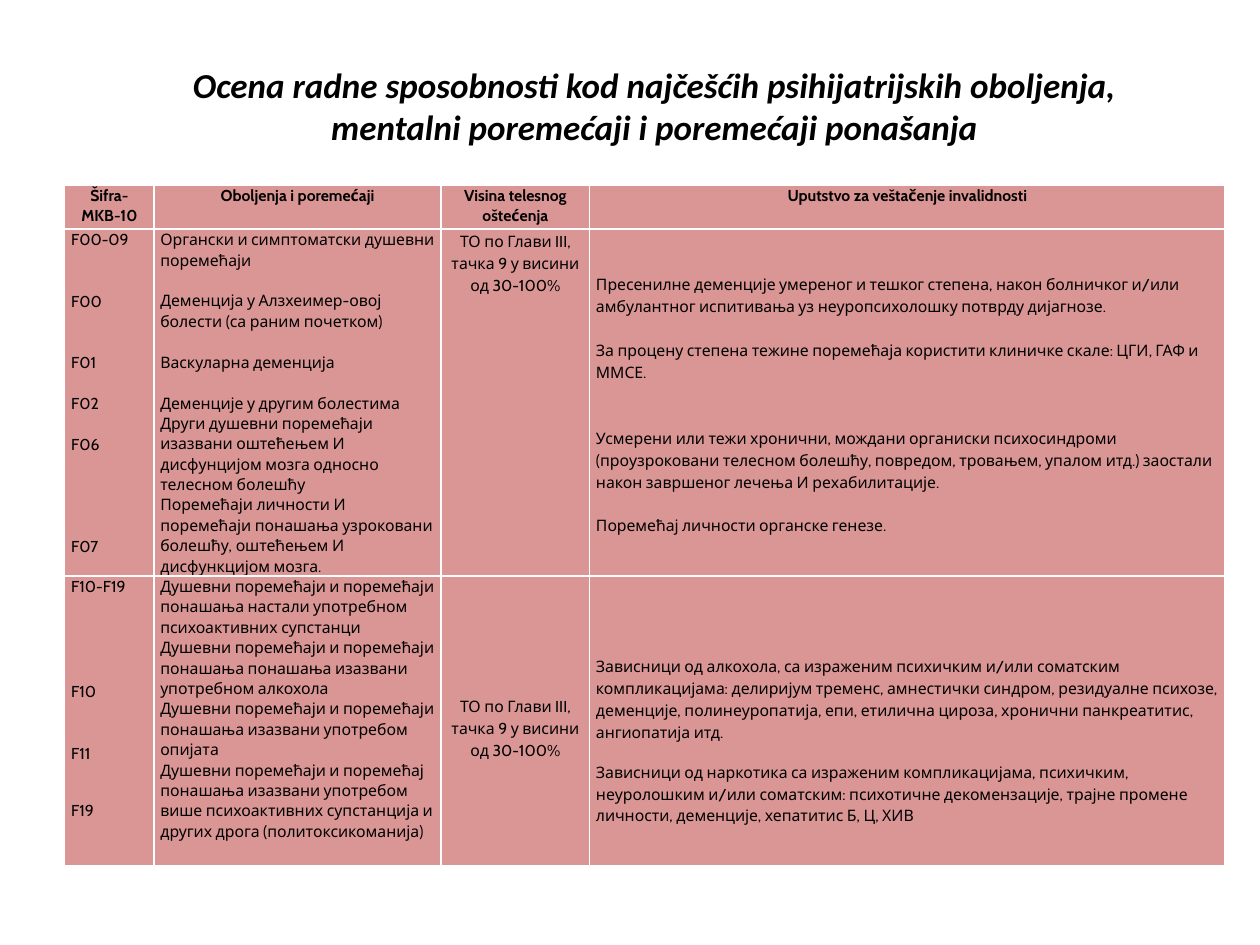
from lxml.etree import SubElement
from pptx import Presentation
from pptx.dml.color import RGBColor
from pptx.enum.text import MSO_ANCHOR as Anchor, PP_ALIGN as Align
from pptx.oxml.ns import qn
from pptx.util import Pt

BLACK = RGBColor(0x00, 0x00, 0x00)
WHITE = RGBColor(0xFF, 0xFF, 0xFF)
ROSE = RGBColor(0xD9, 0x96, 0x94)

TIGHT, LOOSE = 1.07, 1.15
TIGHT_LINE, LOOSE_LINE = 11.7, 12.5
COLUMN_WIDTHS = (51, 164, 85, 363)
ROW_HEIGHTS = (25.2, 178, 165.6)

TITLE = ("Ocena radne sposobnosti kod najčešćih psihijatrijskih oboljenja, "
         "mentalni poremećaji i poremećaji ponašanja")
HEADERS = ("Šifra-MKB-10", "Oboljenja i poremećaji",
           "Visina telesnog oštećenja", "Uputstvo za veštačenje invalidnosti")
DAMAGE = "ТО по Глави III, тачка 9 у висини од 30-100%"

# Each cell: alignment, line spacing, then (gap above in points, text) pairs.
ORGANIC = (
    (Align.LEFT, TIGHT, [
        (0, "F00-09"),
        (2 * TIGHT_LINE, "F00"),
        (2 * TIGHT_LINE, "F01"),
        (TIGHT_LINE, "F02"),
        (TIGHT_LINE, "F06"),
        (4 * TIGHT_LINE, "F07"),
    ]),
    (Align.LEFT, TIGHT, [
        (0, "Органски и симптоматски душевни поремећаји"),
        (TIGHT_LINE, "Деменција у Алзхеимер-овој болести (са раним почетком)"),
        (TIGHT_LINE, "Васкуларна деменција"),
        (TIGHT_LINE, "Деменције у другим болестима"),
        (0, "Други душевни поремећаји изазвани оштећењем И дисфунцијом мозга "
            "односно телесном болешћу"),
        (0, "Поремећаји личности И поремећаји понашања узроковани болешћу, "
            "оштећењем И дисфункцијом мозга."),
    ]),
    (Align.CENTER, LOOSE, [(0, DAMAGE)]),
    (Align.LEFT, LOOSE, [
        (2 * LOOSE_LINE, "Пресенилне деменције умереног и тешког степена, након болничког "
                         "и/или амбулантног испитивања уз неуропсихолошку потврду дијагнозе."),
        (LOOSE_LINE, "За процену степена тежине поремећаја користити клиничке скале: "
                     "ЦГИ, ГАФ и ММСЕ."),
        (2 * LOOSE_LINE, "Усмерени или тежи хронични, мождани органиски психосиндроми "
                         "(проузроковани телесном болешћу, повредом, тровањем, упалом итд.) "
                         "заостали након завршеног лечења И рехабилитације."),
        (LOOSE_LINE, "Поремећај личности органске генезе."),
    ]),
)
ADDICTION = (
    (Align.LEFT, TIGHT, [
        (0, "F10-F19"),
        (48.5, "F10"),
        (2 * TIGHT_LINE, "F11"),
        (21, "F19"),
    ]),
    (Align.LEFT, TIGHT, [
        (0, "Душевни поремећаји и поремећаји понашања настали употребном "
            "психоактивних супстанци"),
        (0, "Душевни поремећаји и поремећаји понашања понашања изазвани "
            "употребном алкохола"),
        (0, "Душевни поремећаји и поремећаји понашања изазвани употребом опијата"),
        (0, "Душевни поремећаји и поремећај понашања изазвани употребом више "
            "психоактивних супстанција и других дрога (политоксикоманија)"),
    ]),
    (Align.CENTER, LOOSE, [(3 * (LOOSE_LINE + 10), DAMAGE)]),
    (Align.LEFT, LOOSE, [
        (2 * (LOOSE_LINE + 10),
         "Зависници од алкохола, са израженим психичким и/или соматским "
         "компликацијама: делиријум тременс, амнестички синдром, резидуалне психозе, "
         "деменције, полинеуропатија, епи, етилична цироза, хронични панкреатитис, "
         "ангиопатија итд."),
        (10, "Зависници од наркотика са израженим компликацијама, психичким, "
             "неуролошким и/или соматским: психотичне декомензације, трајне промене "
             "личности, деменције, хепатитис Б, Ц, ХИВ"),
    ]),
)
HEADER_ROW = tuple((Align.CENTER, TIGHT, [(0, header)]) for header in HEADERS)
ROWS = (HEADER_ROW, ORGANIC, ADDICTION)


def style_font(font, name, size, bold, italic=False):
    font.name, font.size = name, Pt(size)
    font.bold, font.italic = bold, italic
    font.color.rgb = BLACK


def add_borders(cell):
    properties = cell._tc.get_or_add_tcPr()
    for side in ("a:lnL", "a:lnR", "a:lnT", "a:lnB"):
        line = SubElement(properties, qn(side), w=str(Pt(1)))
        fill = SubElement(line, qn("a:solidFill"))
        SubElement(fill, qn("a:srgbClr"), val=str(WHITE))


def fill_cell(cell, content, bold):
    align, spacing, entries = content
    add_borders(cell)
    cell.fill.solid()
    cell.fill.fore_color.rgb = ROSE
    cell.margin_left = cell.margin_right = Pt(3.6)
    cell.margin_top, cell.margin_bottom = Pt(entries[0][0]), 0
    cell.vertical_anchor = Anchor.TOP
    frame = cell.text_frame
    for index, (gap, text) in enumerate(entries):
        para = frame.add_paragraph() if index else frame.paragraphs[0]
        para.text = text
        para.alignment, para.line_spacing = align, spacing
        para.space_before = Pt(gap if index else 0)
        style_font(para.font, "Cabin", 9, bold)


deck = Presentation()
deck.slide_width, deck.slide_height = Pt(720), Pt(540)
page = deck.slides.add_slide(deck.slide_layouts[0])
subtitle = page.placeholders[1].element
subtitle.getparent().remove(subtitle)

title = page.shapes.title
title.left, title.top, title.width, title.height = Pt(82), Pt(31.7), Pt(584), Pt(57)
title.text_frame.text = TITLE
title.text_frame.vertical_anchor = Anchor.MIDDLE
heading = title.text_frame.paragraphs[0]
heading.alignment = Align.CENTER
style_font(heading.font, "Calibri", 20, True, True)

table = page.shapes.add_table(len(ROWS), len(COLUMN_WIDTHS), Pt(37), Pt(105.8),
                              Pt(sum(COLUMN_WIDTHS)), Pt(sum(ROW_HEIGHTS))).table
for column, width in zip(table.columns, COLUMN_WIDTHS):
    column.width = Pt(width)
for row, height, contents in zip(table.rows, ROW_HEIGHTS, ROWS):
    row.height = Pt(height)
    for cell, content in zip(row.cells, contents):
        fill_cell(cell, content, bold=contents is HEADER_ROW)

deck.save("out.pptx")
